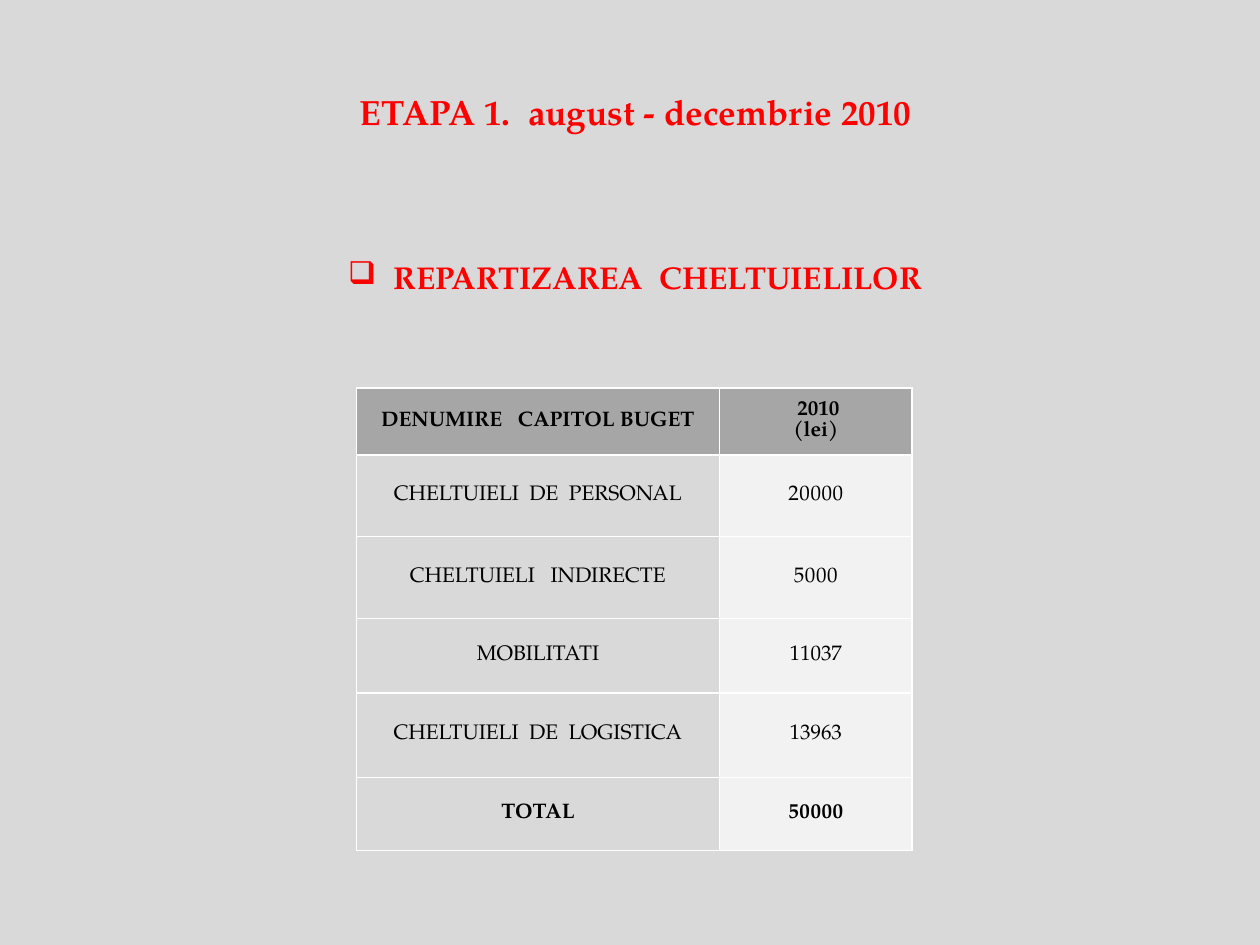
from typing import NamedTuple

from lxml import etree
from pptx import Presentation
from pptx.dml.color import RGBColor
from pptx.enum.text import MSO_ANCHOR, MSO_AUTO_SIZE, PP_ALIGN
from pptx.oxml.ns import qn
from pptx.util import Inches, Pt

CENTER = PP_ALIGN.CENTER
MIDDLE = MSO_ANCHOR.MIDDLE
GROW = MSO_AUTO_SIZE.SHAPE_TO_FIT_TEXT

FONT = "TeX Gyre Pagella"
RED = RGBColor(0xFF, 0x00, 0x00)
BLACK = RGBColor(0x00, 0x00, 0x00)
BACKGROUND = RGBColor(0xD9, 0xD9, 0xD9)
HEADER_FILL = RGBColor(0xA6, 0xA6, 0xA6)
CHAPTER_FILL = RGBColor(0xD9, 0xD9, 0xD9)
AMOUNT_FILL = RGBColor(0xF2, 0xF2, 0xF2)
BORDER = "FFFFFF"
BULLET_INDENT = Inches(0.36)


class Heading(NamedTuple):
    text: str
    left: float
    top: float
    width: float
    height: float
    size: int
    bullet: str = ""


class BudgetRow(NamedTuple):
    chapter: str
    amount: str
    height: float
    bold: bool = False
    spacing: float = 0


HEADINGS = [
    Heading("REPARTIZAREA  CHELTUIELILOR", 2.5, 2, 5.08, 0.4, 18, "❑"),
    Heading("ETAPA 1.  august - decembrie 2010", 2.67, 0.67, 4.75, 0.44, 20),
]
BUDGET = [
    BudgetRow("DENUMIRE   CAPITOL BUGET", " 2010\n(lei)", 0.53, bold=True),
    BudgetRow("CHELTUIELI  DE  PERSONAL", "20000", 0.65, spacing=0.3),
    BudgetRow("CHELTUIELI   INDIRECTE", "5000", 0.65, spacing=0.3),
    BudgetRow("MOBILITATI", "11037", 0.59),
    BudgetRow("CHELTUIELI  DE  LOGISTICA", "13963", 0.67),
    BudgetRow("TOTAL", "50000", 0.58, bold=True, spacing=0.3),
]
COLUMN_WIDTHS = (2.88, 1.53)


def write_text(frame, text: str, *, size: int, color: RGBColor, bold: bool,
               spacing: float = 0, line_height=None) -> None:
    for index, line in enumerate(text.split("\n")):
        paragraph = frame.add_paragraph() if index else frame.paragraphs[0]
        paragraph.alignment = CENTER
        paragraph.line_spacing = line_height
        run = paragraph.add_run()
        run.text = line
        run.font.name = FONT
        run.font.size = Pt(size)
        run.font.bold = bold
        run.font.color.rgb = color
        if spacing:
            run._r.get_or_add_rPr().set("spc", str(round(spacing * 100)))


def add_bullet(paragraph, symbol: str) -> None:
    properties = paragraph._p.get_or_add_pPr()
    properties.set("marL", str(BULLET_INDENT))
    properties.set("indent", str(-BULLET_INDENT))
    color = etree.SubElement(properties, qn("a:buClr"))
    etree.SubElement(color, qn("a:srgbClr"), val=str(RED))
    etree.SubElement(properties, qn("a:buChar"), char=symbol)


def draw_heading(slide, heading: Heading) -> None:
    box = slide.shapes.add_textbox(Inches(heading.left), Inches(heading.top),
                                   Inches(heading.width), Inches(heading.height))
    frame = box.text_frame
    frame.word_wrap = True
    frame.auto_size = GROW
    write_text(frame, heading.text, size=heading.size, color=RED, bold=True)
    if heading.bullet:
        add_bullet(frame.paragraphs[0], heading.bullet)


def format_cell(cell, fill: RGBColor) -> None:
    cell.vertical_anchor = MIDDLE
    cell.margin_left = cell.margin_right = Inches(0.01)
    cell.margin_top = cell.margin_bottom = Inches(0.01)
    properties = cell._tc.get_or_add_tcPr()
    for side in ("a:lnL", "a:lnR", "a:lnT", "a:lnB"):
        line = etree.SubElement(properties, qn(side), w=str(Pt(1)))
        solid = etree.SubElement(line, qn("a:solidFill"))
        etree.SubElement(solid, qn("a:srgbClr"), val=BORDER)
    cell.fill.solid()
    cell.fill.fore_color.rgb = fill


def draw_budget(slide, budget: list[BudgetRow]) -> None:
    table = slide.shapes.add_table(
        len(budget), len(COLUMN_WIDTHS), Inches(2.83), Inches(3.08),
        Inches(sum(COLUMN_WIDTHS)), Inches(sum(row.height for row in budget))).table
    for column, width in zip(table.columns, COLUMN_WIDTHS):
        column.width = Inches(width)
    for index, row in enumerate(budget):
        table.rows[index].height = Inches(row.height)
        fills = (CHAPTER_FILL, AMOUNT_FILL) if index else (HEADER_FILL, HEADER_FILL)
        spacings = (0, row.spacing)
        for column, text in enumerate((row.chapter, row.amount)):
            cell = table.cell(index, column)
            format_cell(cell, fills[column])
            write_text(cell.text_frame, text, size=12, color=BLACK, bold=row.bold,
                       spacing=spacings[column],
                       line_height=Pt(12) if "\n" in text else None)


def main() -> None:
    presentation = Presentation()
    presentation.slide_width = Inches(10)
    presentation.slide_height = Inches(7.5)
    slide = presentation.slides.add_slide(presentation.slide_layouts[6])
    slide.background.fill.solid()
    slide.background.fill.fore_color.rgb = BACKGROUND
    subtitle, title = HEADINGS
    draw_heading(slide, subtitle)
    draw_budget(slide, BUDGET)
    draw_heading(slide, title)
    presentation.save("out.pptx")


if __name__ == "__main__":
    main()
